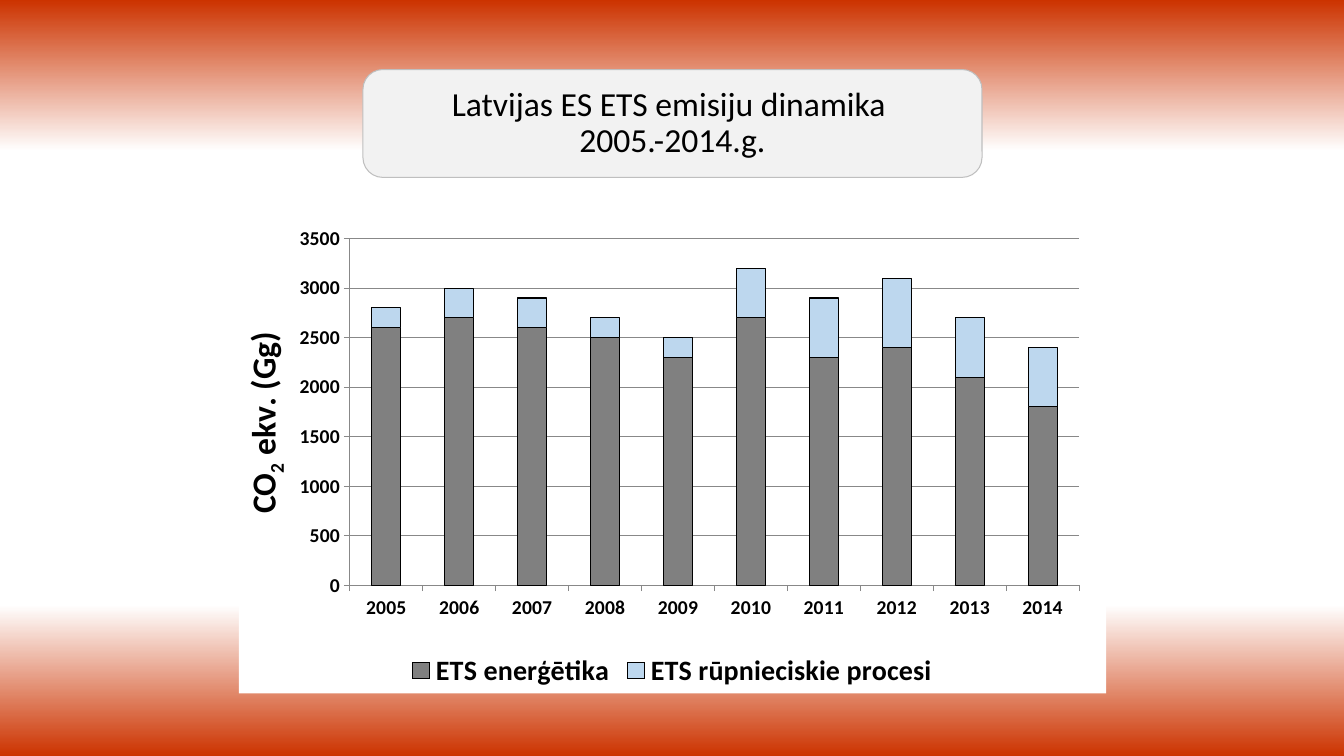
from dataclasses import dataclass

from lxml import etree
from pptx import Presentation
from pptx.chart.axis import _BaseAxis
from pptx.chart.chart import Chart
from pptx.chart.data import CategoryChartData
from pptx.dml.color import RGBColor
from pptx.dml.line import LineFormat
from pptx.enum.chart import XL_CHART_TYPE, XL_LEGEND_POSITION, XL_TICK_MARK
from pptx.enum.shapes import MSO_SHAPE
from pptx.enum.text import MSO_ANCHOR, PP_ALIGN
from pptx.oxml import parse_xml
from pptx.oxml.ns import nsdecls, qn
from pptx.slide import Slide
from pptx.text.text import Font, _Paragraph
from pptx.util import Inches, Pt

STACKED = XL_CHART_TYPE.COLUMN_STACKED
BOTTOM = XL_LEGEND_POSITION.BOTTOM
OUTSIDE = XL_TICK_MARK.OUTSIDE
ROUNDED = MSO_SHAPE.ROUNDED_RECTANGLE
MIDDLE = MSO_ANCHOR.MIDDLE
CENTER = PP_ALIGN.CENTER


@dataclass(frozen=True)
class Theme:
    font: str = "Calibri"
    chart_font: str = "DejaVu Sans"
    text: str = "000000"
    white: str = "FFFFFF"
    band: str = "CC3300"
    panel: str = "F2F2F2"
    panel_line: str = "BFBFBF"
    grid: str = "888888"
    title_size: int = 24
    legend_size: int = 20
    tick_size: int = 14
    base_size: int = 9
    line_width: float = 0.75


@dataclass(frozen=True)
class Emissions:
    name: str
    color: str
    values: tuple[int, ...]


THEME = Theme()
YEARS = [str(year) for year in range(2005, 2015)]
SERIES = [
    Emissions("ETS enerģētika", "808080",
              (2600, 2700, 2600, 2500, 2300, 2700, 2300, 2400, 2100, 1800)),
    Emissions("ETS rūpnieciskie procesi", "BDD7EE",
              (200, 300, 300, 200, 200, 500, 600, 700, 600, 600)),
]
TITLE = ["Latvijas ES ETS emisiju dinamika ", "2005.-2014.g."]
STOPS = [(0, THEME.band), (20, THEME.white), (80, THEME.white), (100, THEME.band)]
PLOT = {"x": 0.128, "y": 0.054, "w": 0.841, "h": 0.721}


def style_font(font: Font, size: int, bold: bool = False, name: str = THEME.font) -> None:
    font.name = name
    font.size = Pt(size)
    font.bold = bold
    font.color.rgb = RGBColor.from_string(THEME.text)


def style_line(line: LineFormat, color: str) -> None:
    line.color.rgb = RGBColor.from_string(color)
    line.width = Pt(THEME.line_width)


def add_text(p: _Paragraph, text: str, *, size: int, bold: bool = False,
             baseline: int = 0) -> None:
    r = p.add_run()
    r.text = text
    style_font(r.font, size, bold)
    if baseline:
        r._r.get_or_add_rPr().set("baseline", str(baseline))


def paint_background(s: Slide) -> None:
    fill = s.background.fill
    fill.gradient()
    fill.gradient_angle = 270
    stops = s.element.find(f".//{qn('a:gsLst')}")
    for stop in list(stops):
        stops.remove(stop)
    for percent, color in STOPS:
        stop = etree.SubElement(stops, qn("a:gs"), pos=str(percent * 1000))
        etree.SubElement(stop, qn("a:srgbClr"), val=color)


def add_title(s: Slide) -> None:
    sp = s.shapes.add_shape(ROUNDED, Inches(3.6), Inches(0.69), Inches(6.14), Inches(1.07))
    sp.shadow.inherit = False
    sp.adjustments[0] = 0.184
    sp.fill.solid()
    sp.fill.fore_color.rgb = RGBColor.from_string(THEME.panel)
    style_line(sp.line, THEME.panel_line)
    tf = sp.text_frame
    tf.word_wrap = True
    tf.vertical_anchor = MIDDLE
    for i, text in enumerate(TITLE):
        p = tf.add_paragraph() if i else tf.paragraphs[0]
        p.alignment = CENTER
        p.line_spacing = 0.9
        add_text(p, text, size=THEME.title_size)


def style_axis(axis: _BaseAxis) -> None:
    axis.major_tick_mark = OUTSIDE
    style_font(axis.tick_labels.font, THEME.tick_size, True)
    style_line(axis.format.line, THEME.grid)


def white_area() -> etree._Element:
    return parse_xml(
        f'<c:spPr {nsdecls("c", "a")}><a:solidFill><a:srgbClr val="{THEME.white}"/>'
        "</a:solidFill><a:ln><a:noFill/></a:ln></c:spPr>")


def lay_out_plot(chart: Chart) -> None:
    area = chart.element.find(f".//{qn('c:plotArea')}")
    for old in area.findall(qn("c:layout")):
        area.remove(old)
    layout = etree.Element(qn("c:layout"))
    manual = etree.SubElement(layout, qn("c:manualLayout"))
    settings = {"layoutTarget": "inner", "xMode": "edge", "yMode": "edge", **PLOT}
    for tag, value in settings.items():
        etree.SubElement(manual, qn(f"c:{tag}"), val=str(value))
    area.insert(0, layout)
    area.append(white_area())
    chart.element.find(qn("c:chart")).addnext(white_area())


def add_emissions_chart(s: Slide) -> None:
    data = CategoryChartData()
    data.categories = YEARS
    for item in SERIES:
        data.add_series(item.name, item.values)
    chart = s.shapes.add_chart(STACKED, Inches(2.37), Inches(2.11), Inches(8.6),
                               Inches(4.77), data).chart
    chart.has_title = False
    style_font(chart.font, THEME.base_size, name=THEME.chart_font)

    plot = chart.plots[0]
    plot.gap_width = 150
    plot.overlap = 100
    plot.vary_by_categories = False
    for series, item in zip(plot.series, SERIES):
        series.format.fill.solid()
        series.format.fill.fore_color.rgb = RGBColor.from_string(item.color)
        style_line(series.format.line, THEME.text)

    style_axis(chart.category_axis)
    axis = chart.value_axis
    style_axis(axis)
    axis.minimum_scale = 0
    axis.maximum_scale = 3500
    axis.major_unit = 500
    style_line(axis.major_gridlines.format.line, THEME.grid)
    p = axis.axis_title.text_frame.paragraphs[0]
    for text, baseline in [("CO", 0), ("2", -25000), (" ekv. (Gg)", 0)]:
        add_text(p, text, size=THEME.title_size, bold=True, baseline=baseline)

    chart.has_legend = True
    chart.legend.position = BOTTOM
    chart.legend.include_in_layout = False
    style_font(chart.legend.font, THEME.legend_size, True)
    lay_out_plot(chart)


def main() -> None:
    prs = Presentation()
    prs.slide_width = Inches(13.33)
    prs.slide_height = Inches(7.5)
    s = prs.slides.add_slide(prs.slide_layouts[6])
    paint_background(s)
    add_emissions_chart(s)
    add_title(s)
    prs.save("out.pptx")


if __name__ == "__main__":
    main()
